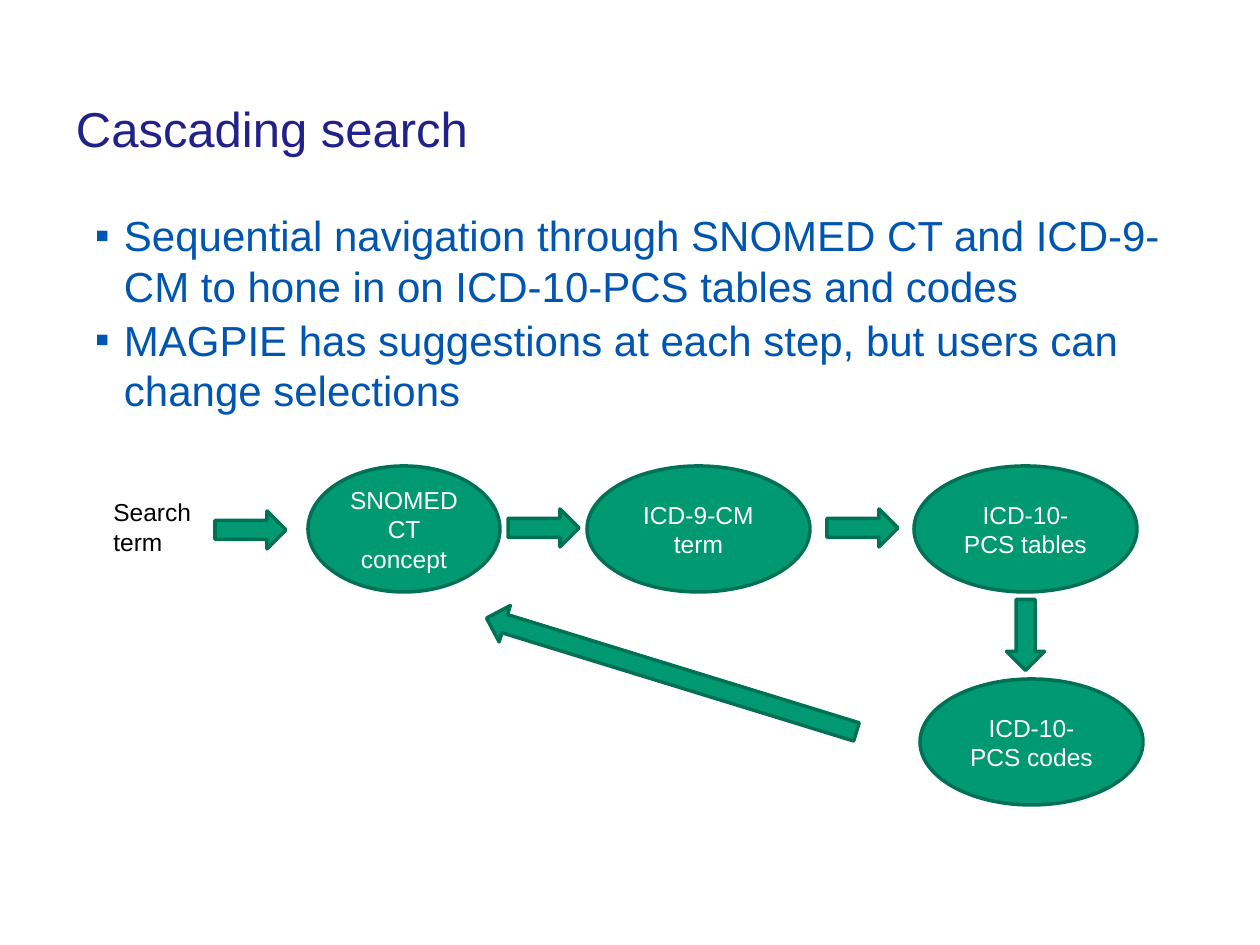
from pptx import Presentation
from pptx.dml.color import RGBColor
from pptx.enum.shapes import MSO_SHAPE as Shape
from pptx.enum.text import MSO_ANCHOR as Anchor, PP_ALIGN as Align
from pptx.oxml.ns import qn
from pptx.util import Pt
from lxml.etree import SubElement

EMU_PER_PX = 914400 / 126


def px(length):
    return round(length * EMU_PER_PX)


def color(value):
    return RGBColor.from_string(value)


class SlideBuilder:
    font_name = "Arial"
    title_color = "21218A"
    body_color = "0055B0"
    fill_color = "009972"
    line_color = "007154"

    def __init__(self, slide):
        self.slide = slide

    def style(self, paragraph, size, font_color):
        paragraph.font.name = self.font_name
        paragraph.font.size = Pt(size)
        paragraph.font.color.rgb = color(font_color)

    def text(self, box, lines, size, font_color, anchor=Anchor.TOP, inset=None):
        frame = self.slide.shapes.add_textbox(*map(px, box)).text_frame
        frame.word_wrap = True
        frame.vertical_anchor = anchor
        if inset is not None:
            frame.margin_left = frame.margin_right = px(inset)
            frame.margin_top = frame.margin_bottom = px(inset)
        frame.text = "\n".join(lines)
        for paragraph in frame.paragraphs:
            self.style(paragraph, size, font_color)
        return frame

    def bullets(self, box, lines):
        frame = self.text(box, lines, 24, self.body_color, inset=13)
        for index, paragraph in enumerate(frame.paragraphs):
            properties = paragraph._p.get_or_add_pPr()
            properties.set("marL", str(px(48)))
            properties.set("indent", str(px(-29)))
            for child in list(properties):
                properties.remove(child)
            bullet_color = SubElement(properties, qn("a:buClr"))
            SubElement(bullet_color, qn("a:srgbClr"), val=self.body_color)
            SubElement(properties, qn("a:buFont"), typeface=self.font_name)
            SubElement(properties, qn("a:buChar"), char="▪")
            self.style(paragraph, 24, self.body_color)
            paragraph.space_before = Pt(1 if index else 0)
            paragraph.space_after = Pt(1)

    def shape(self, kind, box):
        shape = self.slide.shapes.add_shape(kind, *map(px, box))
        shape.shadow.inherit = False
        shape.fill.solid()
        shape.fill.fore_color.rgb = color(self.fill_color)
        shape.line.color.rgb = color(self.line_color)
        shape.line.width = Pt(2)
        return shape

    def step(self, left, top, width, label):
        frame = self.shape(Shape.OVAL, (left, top, width, 126)).text_frame
        frame.word_wrap = True
        frame.vertical_anchor = Anchor.MIDDLE
        frame.text = label
        paragraph = frame.paragraphs[0]
        paragraph.alignment = Align.CENTER
        self.style(paragraph, 14, "FFFFFF")

    def arrow(self, left, top, width=71, rotation=0):
        self.shape(Shape.RIGHT_ARROW, (left, top, width, 38)).rotation = rotation


def main():
    presentation = Presentation()
    presentation.slide_width = px(1260)
    presentation.slide_height = px(945)
    builder = SlideBuilder(presentation.slides.add_slide(presentation.slide_layouts[6]))

    builder.text((63, 88, 925, 79), ["Cascading search"], 28,
                 builder.title_color, Anchor.MIDDLE, 13)
    builder.bullets((63, 197, 1134, 665), [
        "Sequential navigation through SNOMED CT and ICD-9-CM to hone in on "
        "ICD-10-PCS tables and codes",
        "MAGPIE has suggestions at each step, but users can change selections",
    ])
    builder.text((101, 491, 115, 72), ["Search", "term"], 14, "000000")

    for left, top, width, label in [
        (308, 466, 192, "SNOMED CT concept"),
        (587, 466, 223, "ICD-9-CM term"),
        (914, 466, 223, "ICD-10-PCS tables"),
        (920, 679, 223, "ICD-10-PCS codes"),
    ]:
        builder.step(left, top, width, label)

    for left, top in [(215, 511), (508, 509), (827, 509)]:
        builder.arrow(left, top)
    builder.arrow(990, 616, rotation=90)
    builder.arrow(478, 656, width=387, rotation=197.1)

    presentation.save("out.pptx")


if __name__ == "__main__":
    main()
